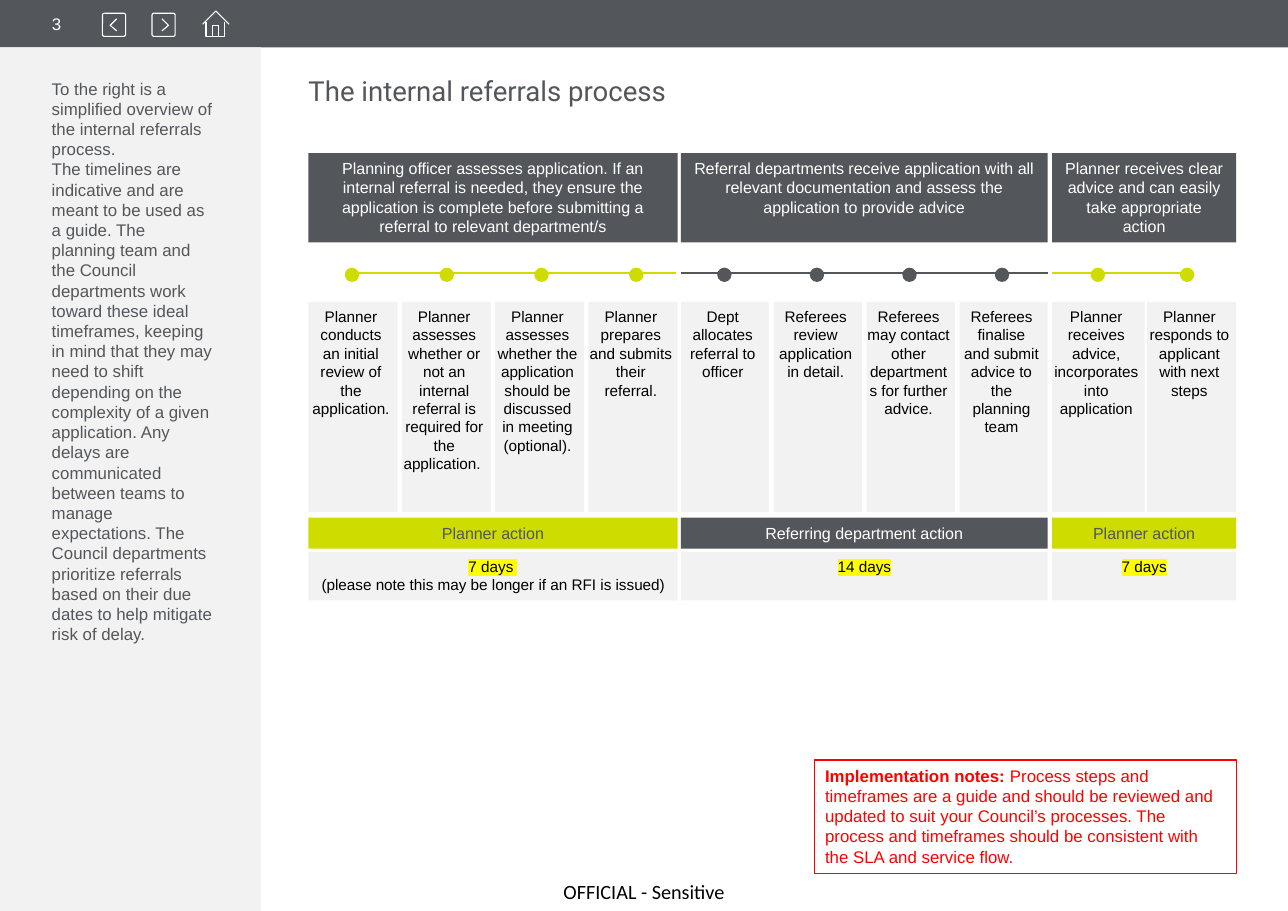
import lxml.etree
import pptx
import pptx.dml.color
import pptx.enum.shapes
import pptx.enum.text
import pptx.oxml.ns
import pptx.util
from pptx.util import Inches

SLATE = pptx.dml.color.RGBColor(0x53, 0x56, 0x5A)
LIME = pptx.dml.color.RGBColor(0xCE, 0xDC, 0x00)
PALE = pptx.dml.color.RGBColor(0xF2, 0xF2, 0xF2)
WHITE = pptx.dml.color.RGBColor(0xFF, 0xFF, 0xFF)
BLACK = pptx.dml.color.RGBColor(0x00, 0x00, 0x00)
RED = pptx.dml.color.RGBColor(0xFF, 0x00, 0x00)

SHAPE = pptx.enum.shapes.MSO_SHAPE
ANCHOR = pptx.enum.text.MSO_ANCHOR
LEFT = pptx.enum.text.PP_ALIGN.LEFT
CENTER = pptx.enum.text.PP_ALIGN.CENTER
PLAIN_INSETS = (0, 0, 0, 0)
BOX_INSETS = (0.1, 0.05, 0.1, 0.05)
STEP_INSETS = (0, 0.05, 0.04, 0.05)

SIDEBAR_TEXT = (
    "To the right is a simplified overview of the internal referrals process.\n"
    "The timelines are indicative and are meant to be used as a guide. "
    "The planning team and the Council departments work toward these ideal timeframes, "
    "keeping in mind that they may need to shift depending on the complexity of a given "
    "application. Any delays are communicated between teams to manage expectations. "
    "The Council departments prioritize referrals based on their due dates to help "
    "mitigate risk of delay."
)
NOTES_TEXT = (
    "Process steps and timeframes are a guide and should be reviewed and updated to suit "
    "your Council’s processes. The process and timeframes should be consistent with the "
    "SLA and service flow."
)

PHASES = [
    dict(
        left=2.8, width=3.35, accent=LIME, action_color=SLATE,
        summary="Planning officer assesses application. If an internal referral is needed, "
                "they ensure the application is complete before submitting a referral to "
                "relevant department/s",
        step_widths=[0.81] * 4,
        steps=[
            "Planner conducts\nan initial review of the application.",
            "Planner assesses whether or not an internal referral is required for the application. ",
            "Planner assesses whether the application should be discussed\nin meeting (optional).",
            "Planner prepares and submits their referral.",
        ],
        track=(3.21, 6.14), first_dot=3.13, dot_pitch=0.86,
        action="Planner action", days="7 days ",
        remark="\n(please note this may be longer if an RFI is issued)",
    ),
    dict(
        left=6.18, width=3.33, accent=SLATE, action_color=WHITE,
        summary="Referral departments receive application with all relevant documentation "
                "and assess the application to provide advice",
        step_widths=[0.8] * 4,
        steps=[
            "Dept allocates referral to officer",
            "Referees review\napplication in detail.",
            "Referees may contact other departments for further advice.",
            "Referees finalise\nand submit advice to the\nplanning team",
        ],
        track=(6.18, 9.51), first_dot=6.51, dot_pitch=0.84,
        action="Referring department action", days="14 days", remark="",
    ),
    dict(
        left=9.55, width=1.67, accent=LIME, action_color=SLATE,
        summary="Planner receives clear advice and can easily take appropriate action",
        step_widths=[0.84, 0.81],
        steps=[
            "Planner receives advice, incorporates into application",
            "Planner responds to applicant with next steps",
        ],
        track=(9.55, 10.77), first_dot=9.9, dot_pitch=0.81,
        action="Planner action", days="7 days", remark="",
    ),
]


def add_run(paragraph, text, size, color, font="Arial", bold=False, highlight=None):
    for index, line in enumerate(text.split("\n")):
        if index:
            paragraph.add_line_break()
        if not line:
            continue
        run = paragraph.add_run()
        run.text = line
        run.font.size = pptx.util.Pt(size)
        run.font.bold = bold
        run.font.color.rgb = color
        if highlight:
            mark = lxml.etree.SubElement(run.font._element, pptx.oxml.ns.qn("a:highlight"))
            lxml.etree.SubElement(mark, pptx.oxml.ns.qn("a:srgbClr"), val=highlight)
        run.font.name = font


def set_frame(shape, align, insets, anchor=ANCHOR.TOP):
    """Lay out the text frame and return its first paragraph."""
    frame = shape.text_frame
    frame.word_wrap = True
    frame.vertical_anchor = anchor
    frame.margin_left, frame.margin_top, frame.margin_right, frame.margin_bottom = map(Inches, insets)
    frame.paragraphs[0].alignment = align
    return frame.paragraphs[0]


def add_label(slide, box, text, size, color, font="Arial", align=LEFT,
              insets=PLAIN_INSETS, anchor=ANCHOR.TOP):
    label = slide.shapes.add_textbox(*map(Inches, box))
    add_run(set_frame(label, align, insets, anchor), text, size, color, font)


def add_block(slide, box, fill=None, outline=None, preset=SHAPE.RECTANGLE):
    block = slide.shapes.add_shape(preset, *map(Inches, box))
    block.shadow.inherit = False
    if fill is None:
        block.fill.background()
    else:
        block.fill.solid()
        block.fill.fore_color.rgb = fill
    if outline is None:
        block.line.fill.background()
    else:
        block.line.color.rgb = outline
        block.line.width = pptx.util.Pt(0.75)
    return block


def add_text_block(slide, box, fill, text, size, color, insets=BOX_INSETS):
    block = add_block(slide, box, fill)
    add_run(set_frame(block, CENTER, insets), text, size, color)


def add_track(slide, start, end, y, color):
    track = slide.shapes.add_connector(
        pptx.enum.shapes.MSO_CONNECTOR.STRAIGHT, Inches(start), Inches(y), Inches(end), Inches(y))
    track.line.color.rgb = color
    track.line.width = pptx.util.Pt(1.5)
    lxml.etree.SubElement(track._element.spPr, pptx.oxml.ns.qn("a:effectLst"))


def add_stroke(slide, points):
    points = [(Inches(x), Inches(y)) for x, y in points]
    builder = slide.shapes.build_freeform(*points[0])
    builder.add_line_segments(points[1:], close=False)
    stroke = builder.convert_to_shape()
    stroke.shadow.inherit = False
    stroke.fill.background()
    stroke.line.color.rgb = WHITE
    stroke.line.width = pptx.util.Pt(0.75)


def add_navigation(slide):
    # Previous and next buttons
    for left, tip, tail in ((0.93, 1.0, 1.06), (1.38, 1.53, 1.47)):
        button = add_block(slide, (left, 0.12, 0.21, 0.21), outline=WHITE,
                           preset=SHAPE.ROUNDED_RECTANGLE)
        button.adjustments[0] = 0.08
        add_stroke(slide, [(tail, 0.17), (tip, 0.23), (tail, 0.28)])
    # Home: roof, walls, door
    add_stroke(slide, [(1.84, 0.22), (1.96, 0.1), (2.08, 0.22)])
    add_stroke(slide, [(1.87, 0.2), (1.87, 0.33), (2.04, 0.33), (2.04, 0.2)])
    add_stroke(slide, [(1.93, 0.33), (1.93, 0.23), (1.98, 0.23), (1.98, 0.33)])


def add_phase(slide, phase):
    left, width, accent = phase["left"], phase["width"], phase["accent"]
    add_text_block(slide, (left, 1.39, width, 0.81), SLATE, phase["summary"], 10.5, WHITE)

    # Timeline
    add_track(slide, *phase["track"], 2.48, accent)
    for index in range(len(phase["steps"])):
        dot_left = phase["first_dot"] + index * phase["dot_pitch"]
        add_block(slide, (dot_left, 2.43, 0.13, 0.13), accent, preset=SHAPE.OVAL)

    # Steps, spread evenly over the phase width
    widths = phase["step_widths"]
    gap = (width - sum(widths)) / (len(widths) - 1)
    step_left = left
    for step, step_width in zip(phase["steps"], widths):
        add_text_block(slide, (step_left, 2.74, step_width, 1.91), PALE, step, 10, BLACK, STEP_INSETS)
        step_left += step_width + gap

    # Who acts, and for how long
    add_text_block(slide, (left, 4.7, width, 0.28), accent, phase["action"], 10.5, phase["action_color"])
    duration = add_block(slide, (left, 5.01, width, 0.44), PALE)
    paragraph = set_frame(duration, CENTER, BOX_INSETS)
    add_run(paragraph, phase["days"], 10, BLACK, highlight="FFFF00")
    add_run(paragraph, phase["remark"], 10, BLACK)


def main():
    deck = pptx.Presentation()
    deck.slide_width, deck.slide_height = Inches(11.69), Inches(8.27)
    slide = deck.slides.add_slide(deck.slide_layouts[6])

    # Page frame
    add_block(slide, (0, 0, 11.69, 0.43), SLATE)
    add_block(slide, (0, 0.43, 2.37, 7.84), PALE)
    add_navigation(slide)
    add_label(slide, (0.47, 0, 0.39, 0.43), "3", 11, WHITE, anchor=ANCHOR.MIDDLE)
    add_label(slide, (4.9, 7.98, 1.89, 0.22), "OFFICIAL - Sensitive", 13.2, BLACK, "Calibri",
              CENTER, anchor=ANCHOR.MIDDLE)

    # Sidebar and title
    add_label(slide, (0.47, 0.71, 1.46, 7.09), SIDEBAR_TEXT, 11, SLATE)
    add_label(slide, (2.8, 0.63, 8.42, 0.38), "The internal referrals process", 18, SLATE, "Roboto",
              insets=(0, 0.04, 0, 0.04))

    for phase in PHASES:
        add_phase(slide, phase)

    # Implementation notes
    notes = set_frame(add_block(slide, (7.39, 6.9, 3.83, 1.03), outline=RED), LEFT, BOX_INSETS)
    add_run(notes, "Implementation notes: ", 11, RED, bold=True)
    add_run(notes, NOTES_TEXT, 11, RED)

    deck.save("out.pptx")


if __name__ == "__main__":
    main()
